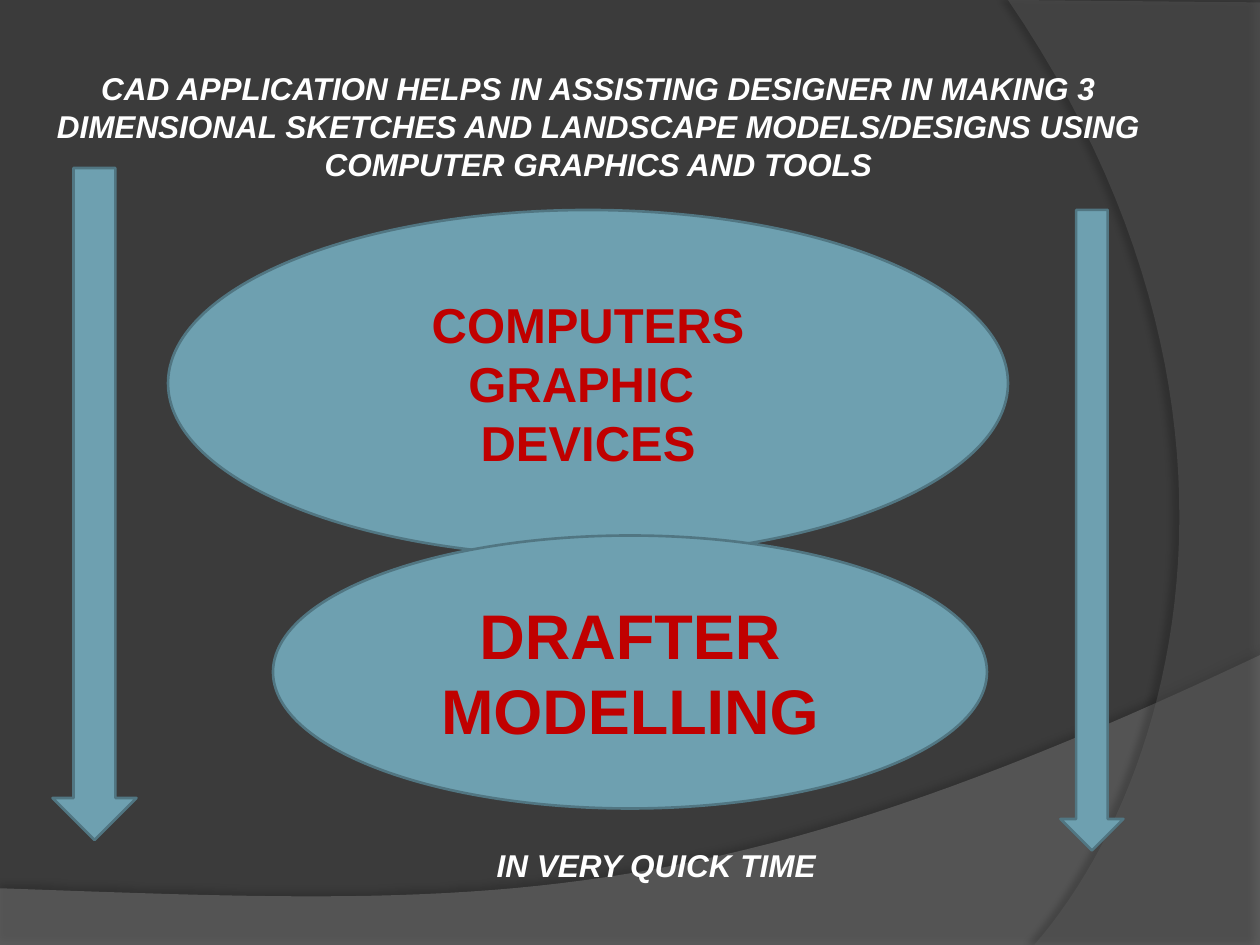
from lxml.etree import SubElement
from pptx import Presentation
from pptx.dml.color import RGBColor
from pptx.enum.shapes import MSO_SHAPE as Shape
from pptx.enum.text import MSO_ANCHOR as Anchor, MSO_AUTO_SIZE as AutoSize, PP_ALIGN as Align
from pptx.oxml.ns import qn
from pptx.util import Pt

WIDTH, HEIGHT = 720, 540
BACKGROUND = RGBColor(0x3B, 0x3B, 0x3B)
LOWER_WAVE = RGBColor(0x7F, 0x7F, 0x7F)
RIGHT_WAVE = RGBColor(0x5E, 0x5E, 0x5E)
TEAL = RGBColor(0x6E, 0xA0, 0xB0)
TEAL_DARK = RGBColor(0x51, 0x76, 0x82)
RED = RGBColor(0xC0, 0x00, 0x00)
WHITE = RGBColor(0xFF, 0xFF, 0xFF)
CAPTION_FORMAT = {"name": "Arial", "size": Pt(18), "bold": True, "italic": True}


def curve_points(start, control_1, control_2, end, steps=48):
    """Return points along a cubic Bézier curve, both ends included."""
    points = []
    for step in range(steps + 1):
        t = step / steps
        weights = ((1 - t) ** 3, 3 * t * (1 - t) ** 2, 3 * t ** 2 * (1 - t), t ** 3)
        points.append(tuple(
            sum(weight * value for weight, value in zip(weights, values))
            for values in zip(start, control_1, control_2, end)
        ))
    return points


def add_wave(slide, points, color, opacity, shadow):
    """Add a translucent outline; shadow is (opacity, blur, distance, degrees)."""
    outline = [(Pt(x), Pt(y)) for x, y in points]
    builder = slide.shapes.build_freeform(*outline[0])
    builder.add_line_segments(outline[1:], close=True)
    wave = builder.convert_to_shape()
    wave.fill.solid()
    wave.fill.fore_color.rgb = color
    wave.line.fill.background()
    wave.shadow.inherit = False

    properties = wave.element.spPr
    fill_color = properties.find(qn("a:solidFill")).find(qn("a:srgbClr"))
    SubElement(fill_color, qn("a:alpha"), val=str(opacity * 1000))

    shadow_opacity, blur, distance, degrees = shadow
    outer = SubElement(
        properties.find(qn("a:effectLst")), qn("a:outerShdw"),
        blurRad=str(Pt(blur)), dist=str(Pt(distance)),
        dir=str(degrees * 60000), algn="ctr", rotWithShape="0",
    )
    shadow_color = SubElement(outer, qn("a:srgbClr"), val="000000")
    SubElement(shadow_color, qn("a:alpha"), val=str(shadow_opacity * 1000))


def write_lines(text_frame, lines, color, font_format):
    for index, line in enumerate(lines):
        paragraph = text_frame.paragraphs[0] if index == 0 else text_frame.add_paragraph()
        paragraph.alignment = Align.CENTER
        run = paragraph.add_run()
        run.text = line
        run.font.color.rgb = color
        for name, value in font_format.items():
            setattr(run.font, name, value)


def add_teal_shape(slide, kind, left, top, width, height):
    shape = slide.shapes.add_shape(kind, Pt(left), Pt(top), Pt(width), Pt(height))
    shape.shadow.inherit = False
    shape.fill.solid()
    shape.fill.fore_color.rgb = TEAL
    shape.line.color.rgb = TEAL_DARK
    shape.line.width = Pt(1.5)
    return shape


def add_ellipse(slide, box, lines, size):
    ellipse = add_teal_shape(slide, Shape.OVAL, *box)
    ellipse.text_frame.word_wrap = True
    ellipse.text_frame.vertical_anchor = Anchor.MIDDLE
    write_lines(ellipse.text_frame, lines, RED, {"name": "Arial", "size": Pt(size), "bold": True})


def write_caption(shape, text):
    frame_format = {
        "word_wrap": True,
        "auto_size": AutoSize.SHAPE_TO_FIT_TEXT,
        "vertical_anchor": Anchor.TOP,
    }
    for name, value in frame_format.items():
        setattr(shape.text_frame, name, value)
    write_lines(shape.text_frame, [text], WHITE, CAPTION_FORMAT)


def set_title(slide, box, text):
    """Fill the title placeholder and bring it in front of the waves."""
    title = slide.shapes.title
    for name, value in zip(("left", "top", "width", "height"), box):
        setattr(title, name, Pt(value))
    write_caption(title, text)
    title.element.getparent().append(title.element)


def add_waves(slide):
    lower_edge = curve_points((WIDTH, 374.4), (402.5, 524.9), (281.5, 517.7), (0, 507.6))
    add_wave(slide, [(0, HEIGHT), (WIDTH, HEIGHT)] + lower_edge,
             LOWER_WAVE, 45, (35, 4, 3.5, 270))
    right_edge = curve_points((591, HEIGHT), (673.2, 445.7), (733, 229.7), (576, 0))
    add_wave(slide, [(WIDTH, 1.4), (WIDTH, HEIGHT)] + right_edge,
             RIGHT_WAVE, 40, (45, 4, 4, 180))


def main():
    presentation = Presentation()
    presentation.slide_width, presentation.slide_height = Pt(WIDTH), Pt(HEIGHT)
    slide = presentation.slides.add_slide(presentation.slide_layouts.get_by_name("Title Only"))
    slide.background.fill.solid()
    slide.background.fill.fore_color.rgb = BACKGROUND

    add_waves(slide)
    add_ellipse(slide, (96, 120, 480, 198), ["COMPUTERS", "GRAPHIC ", "DEVICES"], 28)
    add_teal_shape(slide, Shape.DOWN_ARROW, 30, 96, 48, 384)
    add_ellipse(slide, (156, 306, 408, 156), ["DRAFTER", "MODELLING"], 36)
    add_teal_shape(slide, Shape.DOWN_ARROW, 606, 120, 36, 366)

    set_title(slide, (0, 36, 684, 72.7),
              "CAD APPLICATION HELPS IN ASSISTING DESIGNER IN MAKING 3 DIMENSIONAL SKETCHES "
              "AND LANDSCAPE MODELS/DESIGNS USING COMPUTER GRAPHICS AND TOOLS")
    write_caption(slide.shapes.add_textbox(Pt(144), Pt(480), Pt(462), Pt(29)),
                  "IN VERY QUICK TIME")
    presentation.save("out.pptx")


if __name__ == "__main__":
    main()
